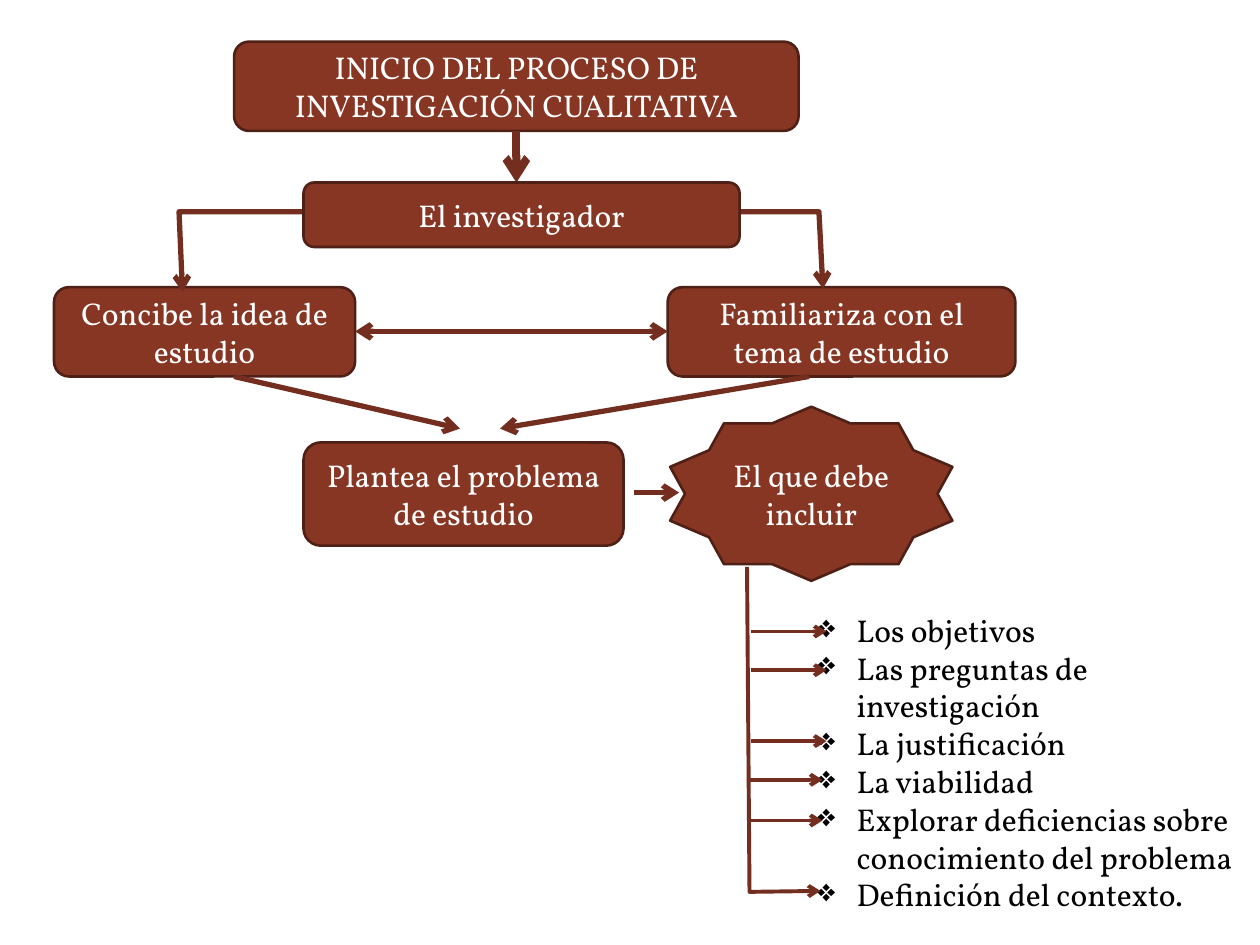
from lxml import etree
from pptx import Presentation
from pptx.dml.color import RGBColor
from pptx.enum.shapes import MSO_CONNECTOR, MSO_SHAPE
from pptx.enum.text import MSO_ANCHOR, MSO_AUTO_SIZE, PP_ALIGN
from pptx.oxml.ns import qn
from pptx.util import Cm, Pt

ROUNDED = MSO_SHAPE.ROUNDED_RECTANGLE
STAR = MSO_SHAPE.STAR_10_POINT
STRAIGHT = MSO_CONNECTOR.STRAIGHT
MIDDLE = MSO_ANCHOR.MIDDLE
GROW = MSO_AUTO_SIZE.SHAPE_TO_FIT_TEXT
CENTER = PP_ALIGN.CENTER

FILL, OUTLINE, ARROW = "873624", "4F2015", "742E1F"
WHITE, BLACK = "FFFFFF", "000000"
FONT_FORMAT = {"name": "Vollkorn", "size": Pt(18)}

# Preset, left, top, width, height in cm, and text
STEPS = [
    (ROUNDED, 4.72, 0.84, 11.38, 1.8, "INICIO DEL PROCESO DE INVESTIGACIÓN CUALITATIVA"),
    (ROUNDED, 1.09, 5.79, 6.07, 1.8, "Concibe la idea de estudio"),
    (ROUNDED, 13.46, 5.79, 7.01, 1.8, "Familiariza con el tema de estudio"),
    (ROUNDED, 6.12, 8.92, 6.45, 2.08, "Plantea el problema de estudio"),
    (STAR, 13.51, 8.2, 5.69, 3.51, "El que debe incluir"),
]
RESEARCHER = (ROUNDED, 6.12, 3.68, 8.79, 1.3, "El investigador")

CONTENTS = [
    "Los objetivos",
    "Las preguntas de investigación",
    "La justificación",
    "La viabilidad",
    "Explorar deficiencias sobre conocimiento del problema",
    "Definición del contexto.",
]

# Start and end of the arrows between steps, in cm
STEP_ARROWS = [
    ((4.72, 7.59), (9.27, 8.64)),
    ((16.31, 7.59), (10.08, 8.64)),
    ((12.78, 9.93), (13.69, 9.93)),
]
RESEARCHER_PATH = [(3.68, 5.89), (3.61, 4.27), (16.51, 4.27), (16.59, 5.82)]
CONTENTS_PATH = [(15.06, 11.43), (15.11, 17.98), (16.54, 17.96)]

# Left end and height of the short arrows to the list, in cm
BRANCHES = [(15.06, 16.54), (15.06, 15.72), (15.14, 14.94), (15.14, 13.51), (15.14, 12.73)]
BRANCH_LENGTH = 1.52


def color(hex_text):
    return RGBColor.from_string(hex_text)


def set_format(target, values):
    for name, value in values.items():
        setattr(target, name, value)


def add_span(para, text, text_color):
    span = para.add_run()
    span.text = text
    set_format(span.font, FONT_FORMAT)
    span.font.color.rgb = color(text_color)


def add_step(page, preset, left, top, width, height, text):
    box = page.shapes.add_shape(preset, Cm(left), Cm(top), Cm(width), Cm(height))
    box.shadow.inherit = False
    box.fill.solid()
    box.fill.fore_color.rgb = color(FILL)
    box.line.color.rgb = color(OUTLINE)
    box.line.width = Pt(1.5)
    set_format(box.text_frame, {"word_wrap": True, "vertical_anchor": MIDDLE})
    para = box.text_frame.paragraphs[0]
    para.alignment = CENTER
    add_span(para, text, WHITE)


def style_arrow(arrow, weight, both_ends):
    arrow.line.color.rgb = color(ARROW)
    arrow.line.width = Pt(weight)
    outline = arrow.line._get_or_add_ln()
    for end in ("a:headEnd", "a:tailEnd") if both_ends else ("a:tailEnd",):
        etree.SubElement(outline, qn(end), type="arrow")


def add_arrow(page, start, end, weight, both_ends=False):
    arrow = page.shapes.add_connector(STRAIGHT, *map(Cm, start + end))
    style_arrow(arrow, weight, both_ends)
    etree.SubElement(arrow._element.spPr, qn("a:effectLst"))


def add_bent_arrow(page, points, weight, both_ends=False):
    corners = [(Cm(x), Cm(y)) for x, y in points]
    builder = page.shapes.build_freeform(*corners[0])
    builder.add_line_segments(corners[1:], close=False)
    arrow = builder.convert_to_shape()
    arrow.fill.background()
    arrow.shadow.inherit = False
    style_arrow(arrow, weight, both_ends)


def add_bullet_list(page, left, top, width, height, items):
    box = page.shapes.add_textbox(Cm(left), Cm(top), Cm(width), Cm(height))
    frame = box.text_frame
    set_format(frame, {"word_wrap": True, "auto_size": GROW})
    indent = Cm(0.79)
    for index, item in enumerate(items):
        para = frame.add_paragraph() if index else frame.paragraphs[0]
        properties = para._p.get_or_add_pPr()
        properties.set("marL", str(indent))
        properties.set("indent", str(-indent))
        etree.SubElement(properties, qn("a:buChar"), char="❖")
        add_span(para, item, BLACK)


def main():
    deck = Presentation()
    deck.slide_width, deck.slide_height = Cm(25.4), Cm(19.05)
    page = deck.slides.add_slide(deck.slide_layouts[6])

    # Steps and list of contents
    for step in STEPS:
        add_step(page, *step)
    add_bullet_list(page, 16.23, 12.19, 9.32, 6.4, CONTENTS)

    # Researcher, over the arrow that passes behind
    add_arrow(page, (10.41, 2.64), (10.41, 3.68), 4.5)
    add_bent_arrow(page, RESEARCHER_PATH, 3, both_ends=True)
    add_step(page, *RESEARCHER)

    # Arrows between steps
    add_arrow(page, (7.16, 6.68), (13.46, 6.68), 3, both_ends=True)
    for start, end in STEP_ARROWS:
        add_arrow(page, start, end, 3)

    # Arrows to the list
    add_bent_arrow(page, CONTENTS_PATH, 2.25)
    for left, height in BRANCHES:
        add_arrow(page, (left, height), (left + BRANCH_LENGTH, height), 2.25)

    deck.save("out.pptx")


if __name__ == "__main__":
    main()
